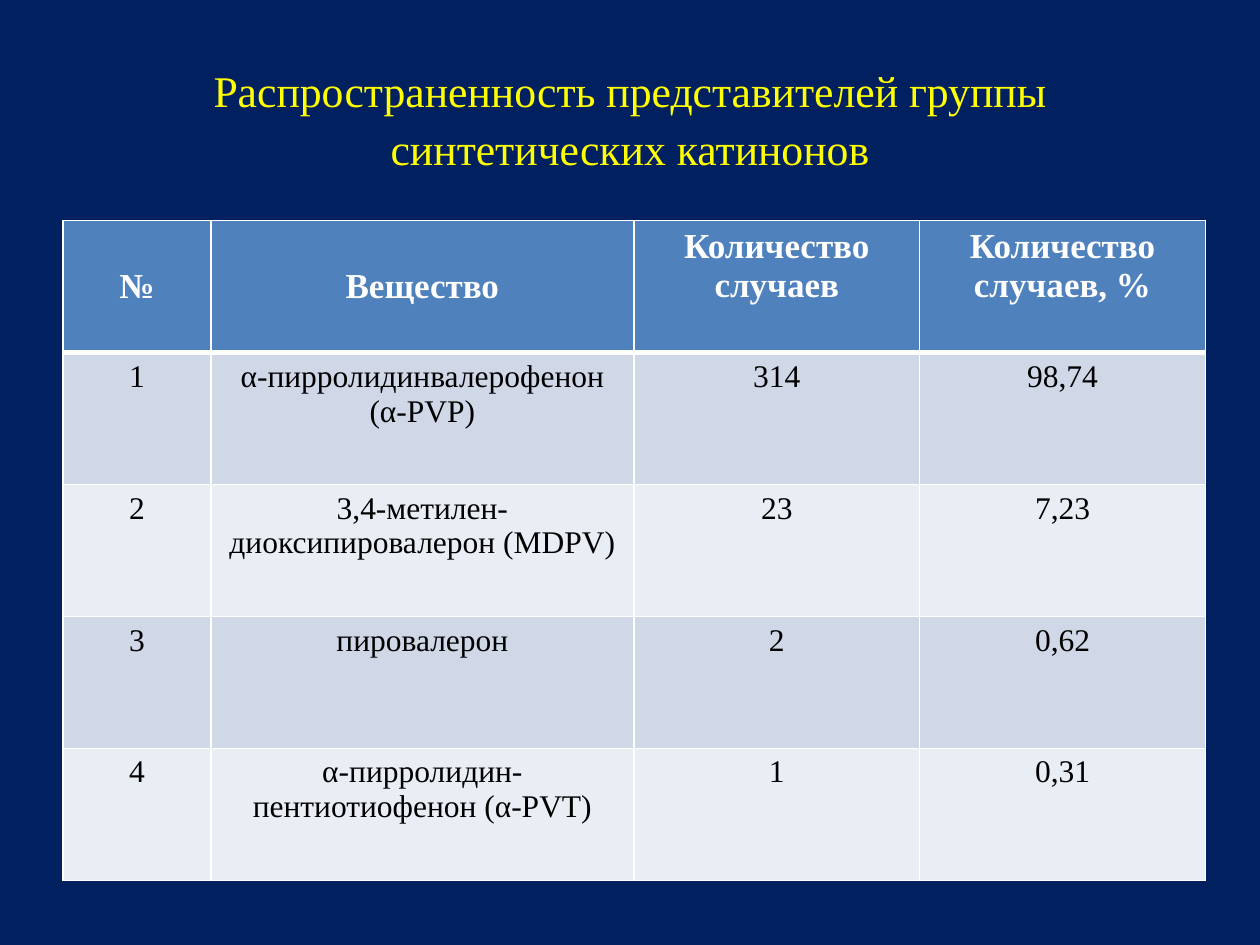
import pptx
import pptx.util
import pptx.dml.color
import pptx.enum.text
import pptx.oxml
import pptx.oxml.ns

Cm, Pt = pptx.util.Cm, pptx.util.Pt
Align = pptx.enum.text.PP_ALIGN
Anchor = pptx.enum.text.MSO_ANCHOR
hues = {"back": "002060", "title": "FFFF00", "head": "4F81BD", "odd": "D0D8E8",
        "even": "E9EDF4", "white": "FFFFFF", "black": "000000"}
looks = {
    "title": {"size": Pt(25), "bold": False, "name": "Times New Roman"},
    "head": {"size": Pt(20), "bold": True, "name": "Times New Roman"},
    "body": {"size": Pt(18), "bold": False, "name": "Times New Roman"},
}
rows = [
    ["№", "Вещество", "Количество\nслучаев", "Количество\nслучаев, %"],
    ["1", "α-пирролидинвалерофенон\n(α-PVP)", "314", "98,74"],
    ["2", "3,4-метилен-\nдиоксипировалерон (MDPV)", "23", "7,23"],
    ["3", "пировалерон", "2", "0,62"],
    ["4", "α-пирролидин-\nпентиотиофенон (α-PVT)", "1", "0,31"],
]
wides = [2.98, 8.53, 5.76, 5.76]
tall = 2.66


def paint(fill, hue):
    fill.solid()
    fill.fore_color.rgb = pptx.dml.color.RGBColor.from_string(hues[hue])


def write(frame, text, look, hue):
    frame.text = text
    for para in frame.paragraphs:
        para.alignment = Align.CENTER
        for run in para.runs:
            for key, value in looks[look].items():
                setattr(run.font, key, value)
            paint(run.font.fill, hue)


deck = pptx.Presentation()
deck.slide_width, deck.slide_height = Cm(25.4), Cm(19.05)
slide = deck.slides.add_slide(deck.slide_layouts[6])
paint(slide.background.fill, "back")

title = slide.shapes.add_textbox(Cm(1.27), Cm(0.76), Cm(22.86), Cm(3.18)).text_frame
title.word_wrap = True
title.vertical_anchor = Anchor.MIDDLE
write(title, "Распространенность представителей группы синтетических катинонов", "title", "title")
title.paragraphs[0].line_spacing = 1.1

table = slide.shapes.add_table(len(rows), len(wides), Cm(1.27), Cm(4.45),
                               Cm(sum(wides)), Cm(tall * len(rows))).table
for col, wide in zip(table.columns, wides):
    col.width = Cm(wide)

for r, row in enumerate(rows):
    table.rows[r].height = Cm(tall)
    for c, text in enumerate(row):
        cell = table.cell(r, c)
        if r == 0:
            write(cell.text_frame, text, "head", "white")
        else:
            write(cell.text_frame, text, "body", "black")
        if r == 0 and c < 2:
            cell.vertical_anchor = Anchor.MIDDLE
        props = cell._tc.get_or_add_tcPr()
        for side in "LRTB":
            thick = 3 if (r, side) in [(0, "B"), (1, "T")] else 1
            props.append(pptx.oxml.parse_xml(
                f'<a:ln{side} {pptx.oxml.ns.nsdecls("a")} w="{Pt(thick)}"><a:solidFill>'
                f'<a:srgbClr val="{hues["white"]}"/></a:solidFill></a:ln{side}>'))
        paint(cell.fill, "head" if r == 0 else "odd" if r % 2 else "even")

deck.save("out.pptx")
